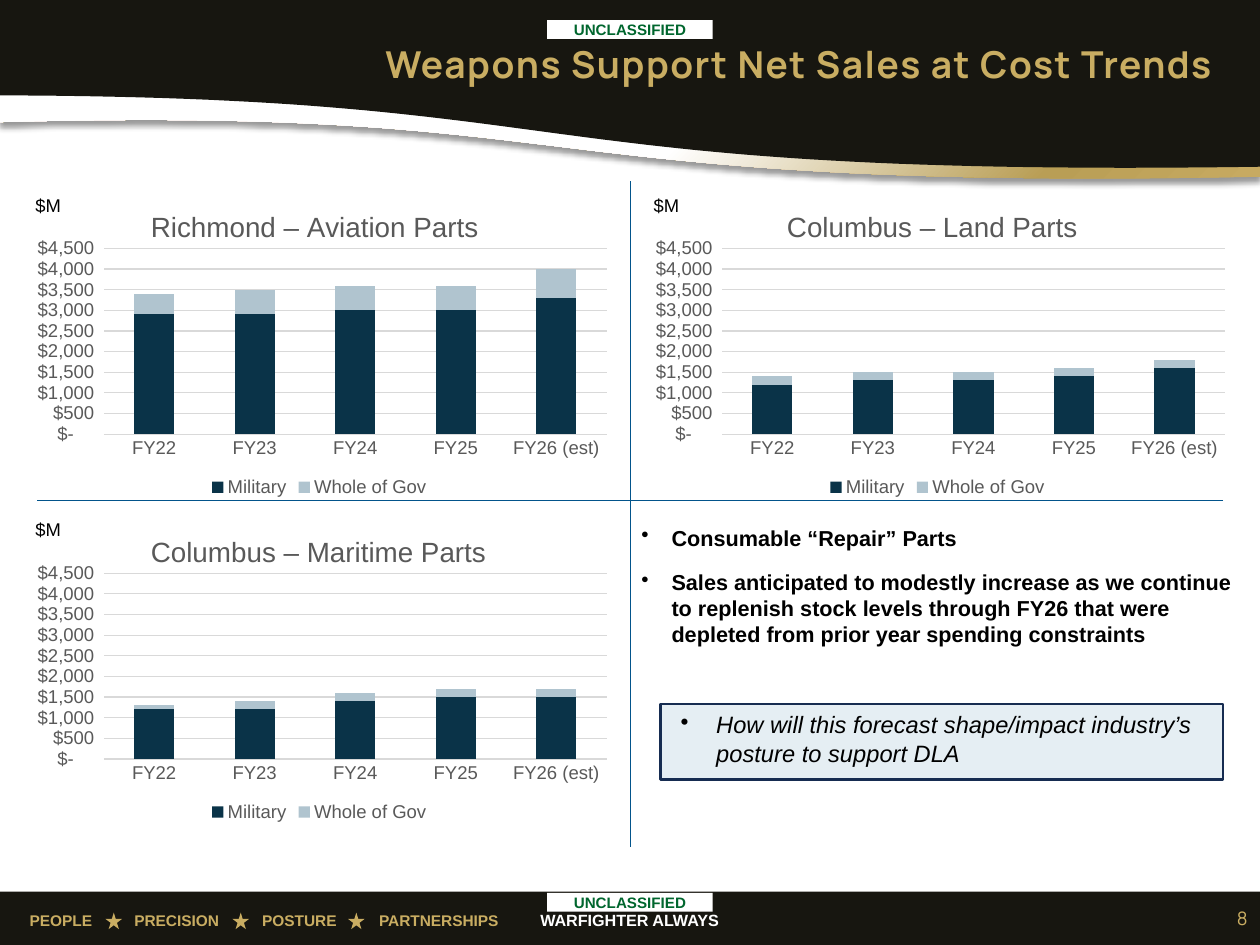
"""Builds the slide on net sales trends for weapons support parts."""
import pptx
import pptx.chart.data
import pptx.dml.color
import pptx.enum.chart
import pptx.enum.shapes
import pptx.enum.text
import pptx.oxml
import pptx.oxml.ns
import pptx.util
from lxml import etree

Cm, Pt = pptx.util.Cm, pptx.util.Pt
KIND = pptx.enum.shapes.MSO_SHAPE
SIDE = pptx.enum.text.PP_ALIGN
MID = pptx.enum.text.MSO_ANCHOR.MIDDLE
NS = 'xmlns:a="http://schemas.openxmlformats.org/drawingml/2006/main"'

WIDE, HIGH = 28.78, 21.59
GOLD, DARK, WHITE, GRAY, BLUE = "C9AD62", "171610", "FFFFFF", "595959", "02548B"
TITLE = "Weapons Support Net Sales at Cost Trends"
MOTTO = ["PEOPLE", "PRECISION", "POSTURE", "PARTNERSHIPS"]
STOPS = [2.39, 5.31, 7.98]
STARS = [2.41, 5.31, 7.95]
YEARS = ["FY22", "FY23", "FY24", "FY25", "FY26 (est)"]
SERIES = [("Military", "0A3348"), ("Whole of Gov", "B0C4CF")]
CHARTS = [
    ("Columbus – Maritime Parts", 0.46, 11.56, 0.21,
     [(1200, 1200, 1400, 1500, 1500), (100, 200, 200, 200, 200)]),
    ("Columbus – Land Parts", 14.58, 4.14, 0.24,
     [(1200, 1300, 1300, 1400, 1600), (200, 200, 200, 200, 200)]),
    ("Richmond – Aviation Parts", 0.46, 4.14, 0.21,
     [(2900, 2900, 3000, 3000, 3300), (500, 600, 600, 600, 700)]),
]
POINTS = [
    "Consumable “Repair” Parts",
    "Sales anticipated to modestly increase as we continue to replenish stock "
    "levels through FY26 that were depleted from prior year spending constraints",
]
ASK = "How will this forecast shape/impact industry’s posture to support DLA"
MONEY = '_("$"* #,##0_);_("$"* \\(#,##0\\);_("$"* "-"??_);_(@_)'
RULES = [(27.94, 11.43, 0.84, 11.43), (14.4, 19.35, 14.4, 4.14)]
GRAD = (f'<a:gradFill {NS} rotWithShape="1"><a:gsLst>'
        '<a:gs pos="55000"><a:srgbClr val="FFFFFF"/></a:gs>'
        '<a:gs pos="84000"><a:srgbClr val="B99E55"/></a:gs>'
        '<a:gs pos="100000"><a:srgbClr val="C7AA61"/></a:gs></a:gsLst>'
        '<a:path path="circle"><a:fillToRect r="100000" b="100000"/></a:path>'
        '</a:gradFill>')
SHADE = (f'<a:effectLst {NS}><a:outerShdw blurRad="50800" dist="38100" dir="5400000" '
         'algn="t" rotWithShape="0"><a:srgbClr val="000000"><a:alpha val="40000"/>'
         '</a:srgbClr></a:outerShdw></a:effectLst>')

deck = pptx.Presentation()
deck.slide_width, deck.slide_height = Cm(WIDE), Cm(HIGH)
slide = deck.slides.add_slide(deck.slide_layouts[6])
shapes = slide.shapes


def hue(code):
    return pptx.dml.color.RGBColor.from_string(code)


def paint(form, code):
    form.fill.solid()
    form.fill.fore_color.rgb = hue(code)


def style(font, size, code, face="Arial", bold=False, slant=False):
    font.size, font.name, font.bold, font.italic = Pt(size), face, bold, slant
    font.color.rgb = hue(code)


def block(kind, x, y, w, h, code):
    form = shapes.add_shape(kind, Cm(x), Cm(y), Cm(w), Cm(h))
    form.shadow.inherit = False
    paint(form, code)
    form.line.fill.background()
    return form


def write(form, lines, size, code, align=SIDE.LEFT, inset=None, anchor=None,
          dot=None, stops=(), after=0, **look):
    frame = form.text_frame
    frame.word_wrap = True
    if inset:
        (frame.margin_left, frame.margin_top,
         frame.margin_right, frame.margin_bottom) = map(Cm, inset)
    if anchor is not None:
        frame.vertical_anchor = anchor
    for i, line in enumerate(lines):
        para = frame.paragraphs[0] if i == 0 else frame.add_paragraph()
        para.text, para.alignment = line, align
        para.space_after = Pt(after)
        props = para._p.get_or_add_pPr()
        if dot:
            left, hang = dot
            props.set("marL", str(Cm(left)))
            props.set("indent", str(-Cm(hang)))
            etree.SubElement(props, pptx.oxml.ns.qn("a:buChar")).set("char", "•")
        if stops:
            tabs = etree.SubElement(props, pptx.oxml.ns.qn("a:tabLst"))
            for stop in stops:
                tab = etree.SubElement(tabs, pptx.oxml.ns.qn("a:tab"))
                tab.set("pos", str(Cm(stop)))
                tab.set("algn", "l")
        style(para.font, size, code, **look)
    return form


def label(x, y, w, h, lines, size, code, **more):
    form = shapes.add_textbox(Cm(x), Cm(y), Cm(w), Cm(h))
    return write(form, lines, size, code, **more)


def swoosh(top, left, bend, fold, right):
    ends = (0, left), bend, fold, (WIDE, right)
    curve = []
    for i in range(61):
        t = i / 60
        mix = (1 - t) ** 3, 3 * t * (1 - t) ** 2, 3 * t * t * (1 - t), t ** 3
        curve.append(tuple(Cm(sum(m * e[k] for m, e in zip(mix, ends))) for k in (0, 1)))
    path = shapes.build_freeform(Cm(WIDE), Cm(top))
    path.add_line_segments([(0, Cm(top))] + curve, close=True)
    form = path.convert_to_shape()
    form.shadow.inherit = False
    paint(form, DARK)
    form.line.fill.background()
    return form


def place(node, **spots):
    tag = pptx.oxml.ns.qn
    for old in node.findall(tag("c:layout")):
        node.remove(old)
    box = etree.Element(tag("c:layout"))
    man = etree.SubElement(box, tag("c:manualLayout"))
    for key, val in spots.items():
        etree.SubElement(man, tag("c:" + key)).set("val", str(val))
    spot = 1 if node.find(tag("c:tx")) is not None else 0
    node.insert(spot, box)


def graph(name, x, y, lead, rows):
    data = pptx.chart.data.CategoryChartData(number_format=MONEY)
    data.categories = YEARS
    for (key, _), row in zip(SERIES, rows):
        data.add_series(key, row)
    chart = shapes.add_chart(pptx.enum.chart.XL_CHART_TYPE.COLUMN_STACKED,
                             Cm(x), Cm(y), Cm(13.67), Cm(7.32), data).chart
    style(chart.font, 12, GRAY)
    chart.has_title = True
    head = chart.chart_title
    head.text_frame.text = name
    style(head.text_frame.paragraphs[0].font, 18, GRAY)
    place(head._element, xMode="edge", yMode="edge", x=lead, y=0.07)
    chart.has_legend = True
    chart.legend.position = pptx.enum.chart.XL_LEGEND_POSITION.BOTTOM
    chart.legend.include_in_layout = False
    style(chart.legend.font, 12, GRAY)
    plot = chart.plots[0]
    plot.gap_width, plot.overlap, plot.vary_by_categories = 150, 100, False
    for part, (_, code) in zip(plot.series, SERIES):
        paint(part.format, code)
    cost, year = chart.value_axis, chart.category_axis
    for axis in (cost, year):
        axis.major_tick_mark = axis.minor_tick_mark = pptx.enum.chart.XL_TICK_MARK.NONE
        style(axis.tick_labels.font, 12, GRAY)
    cost.minimum_scale, cost.maximum_scale, cost.major_unit = 0, 4500, 500
    cost.tick_labels.number_format = MONEY
    cost.tick_labels.number_format_is_linked = False
    cost.format.line.fill.background()
    for line in (cost.major_gridlines.format.line, year.format.line):
        line.color.rgb, line.width = hue("D9D9D9"), Pt(0.75)
    area = chart._chartSpace.chart.plotArea
    place(area, layoutTarget="inner", xMode="edge", yMode="edge",
          x=0.14, y=0.21, w=0.84, h=0.58)


block(KIND.RECTANGLE, 0, 20.37, WIDE, HIGH - 20.37, DARK)
label(11.35, 20.68, 6.07, 0.71, ["WARFIGHTER ALWAYS"], 10.5, WHITE,
      align=SIDE.CENTER, bold=True)
label(0.43, 20.7, 11.71, 0.71, ["\t".join(MOTTO)], 10, GOLD, stops=STOPS, bold=True)
for x in STARS:
    block(KIND.STAR_5_POINT, x, 20.85, 0.38, 0.38, GOLD)

band = swoosh(1.5, 2.79, (13.94, 2.41), (11.53, 4.37), 4.04)
props = band._element.spPr
props.replace(props.find(pptx.oxml.ns.qn("a:solidFill")), pptx.oxml.parse_xml(GRAD))
props.replace(props.find(pptx.oxml.ns.qn("a:effectLst")), pptx.oxml.parse_xml(SHADE))
swoosh(0, 2.18, (13.87, 2.21), (11.48, 4.06), 3.81)

for y in (0.46, 20.4):
    write(block(KIND.RECTANGLE, 12.5, y, 3.78, 0.43, WHITE), ["UNCLASSIFIED"],
          9.8, "00662E", align=SIDE.CENTER, anchor=MID, bold=True)
label(27.66, 20.4, 1.07, 1.14, ["8"], 12, GOLD, align=SIDE.RIGHT, anchor=MID,
      inset=(0.23, 0.1, 0.23, 0.1), face="Manrope")

for item in CHARTS:
    graph(*item)
for _, x, y, _, _ in CHARTS:
    label(x + 0.1, y + 0.16, 1.45, 0.76, ["$M"], 11.9, "000000")

label(14.63, 11.96, 13.72, 2.84, POINTS, 14, "000000", inset=(0, 0.03, 0, 0),
      dot=(0.71, 0.69), stops=[0.71], after=12, bold=True)
card = block(KIND.RECTANGLE, 15.09, 16.08, 12.85, 1.73, "E5EEF3")
card.line.color.rgb, card.line.width = hue("162C51"), Pt(1.5)
write(card, [ASK], 15.3, "000000", inset=(0.25, 0.15, 0, 0.25),
      anchor=pptx.enum.text.MSO_ANCHOR.TOP, dot=(1.02, 0.81), stops=[1.02],
      after=6, slant=True)

for ends in RULES:
    rule = shapes.add_connector(pptx.enum.shapes.MSO_CONNECTOR.STRAIGHT, *map(Cm, ends))
    rule.line.color.rgb, rule.line.width = hue(BLUE), Pt(1)
    etree.SubElement(rule._element.spPr, pptx.oxml.ns.qn("a:effectLst"))

head = label(5.46, 0.94, 22.48, 1.04, [TITLE], 24, GOLD, align=SIDE.RIGHT,
             anchor=MID, face="Manrope", bold=True)
head.text_frame.paragraphs[0].runs[0]._r.get_or_add_rPr().set("spc", "100")
deck.save("out.pptx")
